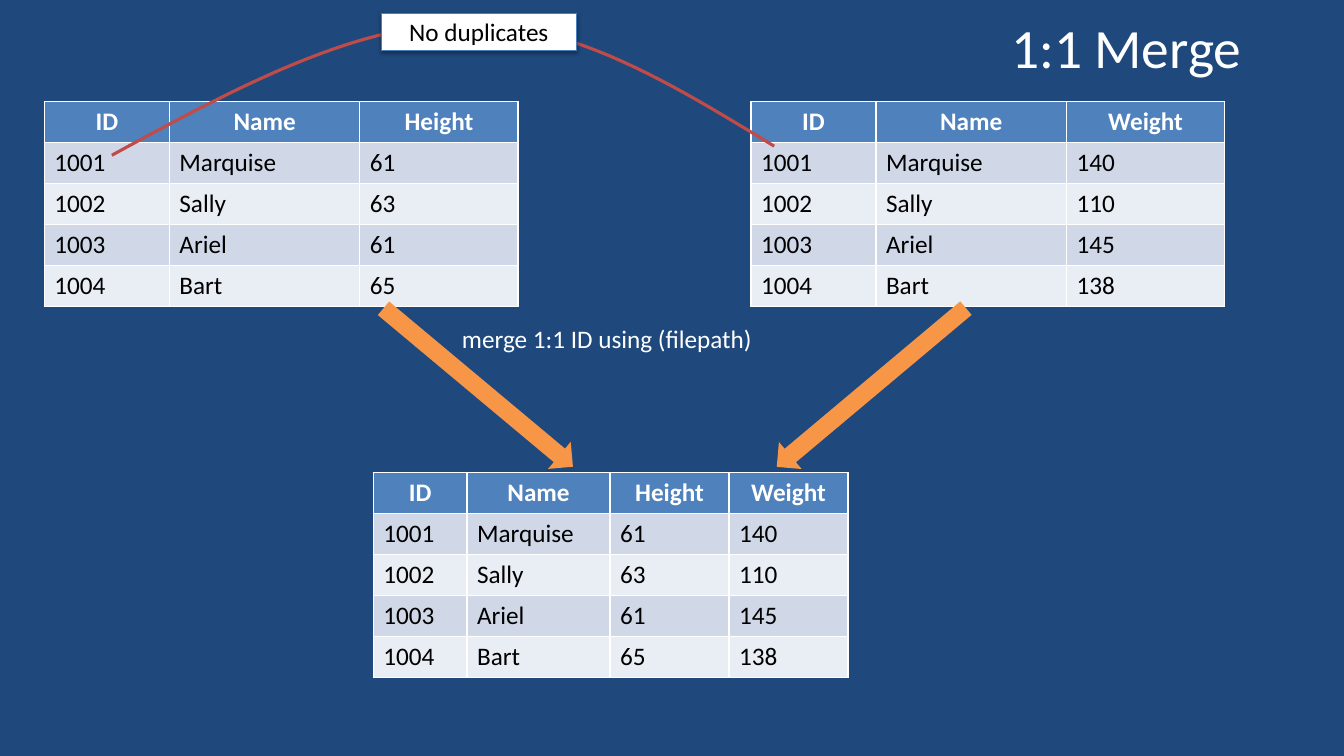
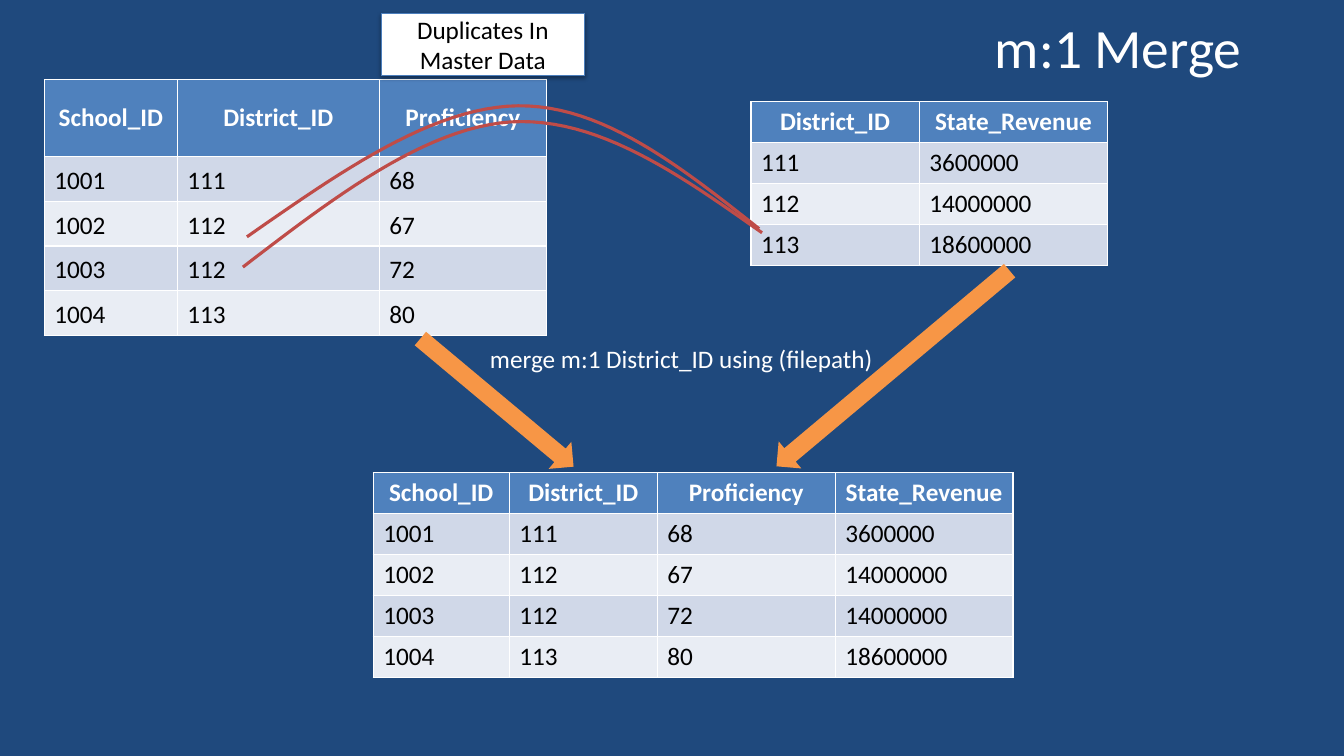
from dataclasses import dataclass

from lxml import etree
from pptx import Presentation
from pptx.dml.color import RGBColor
from pptx.enum.shapes import MSO_SHAPE
from pptx.enum.text import MSO_ANCHOR, MSO_AUTO_SIZE, PP_ALIGN
from pptx.oxml.ns import qn
from pptx.util import Pt


@dataclass(frozen=True)
class Theme:
    background = RGBColor(0x1F, 0x49, 0x7D)
    light = RGBColor(0xFF, 0xFF, 0xFF)
    dark = RGBColor(0x00, 0x00, 0x00)
    header = RGBColor(0x4F, 0x81, 0xBD)
    bands = (RGBColor(0xD0, 0xD8, 0xE8), RGBColor(0xE9, 0xED, 0xF4))
    arrow = RGBColor(0xF7, 0x96, 0x46)
    curve = RGBColor(0xBF, 0x4C, 0x48)
    callout_line = RGBColor(0x4B, 0x7E, 0xBC)
    font = "Calibri"
    title_size = Pt(39.6)
    text_size = Pt(18)


theme = Theme()
ROW_HEIGHT = 29.2
ARROW_HEIGHT = 25.2
CURVE_STEPS = 24


def write(frame, text, color, size=theme.text_size, align=PP_ALIGN.CENTER, bold=False):
    frame.text = text
    paragraph = frame.paragraphs[0]
    paragraph.alignment = align
    font = paragraph.font
    font.name, font.size, font.bold = theme.font, size, bold
    font.color.rgb = color


def add_data_table(slide, left, top, widths, rows, header_height=ROW_HEIGHT, row_height=ROW_HEIGHT):
    height = header_height + row_height * (len(rows) - 1)
    table = slide.shapes.add_table(
        len(rows), len(widths), Pt(left), Pt(top), Pt(sum(widths)), Pt(height)).table
    for column, width in zip(table.columns, widths):
        column.width = Pt(width)
    for row_index, values in enumerate(rows):
        is_header = row_index == 0
        table.rows[row_index].height = Pt(header_height if is_header else row_height)
        for column_index, value in enumerate(values):
            cell = table.cell(row_index, column_index)
            cell.fill.solid()
            if is_header:
                cell.fill.fore_color.rgb = theme.header
                cell.vertical_anchor = MSO_ANCHOR.MIDDLE
                write(cell.text_frame, value, theme.light, bold=True)
            else:
                cell.fill.fore_color.rgb = theme.bands[(row_index - 1) % 2]
                cell.vertical_anchor = MSO_ANCHOR.BOTTOM
                write(cell.text_frame, value, theme.dark, align=PP_ALIGN.LEFT)


# Content: arrows are (left, top, width, rotation); curves are two joined
# cubic Bezier segments given by seven points
merges = [
    {
        "title": "1:1 Merge",
        "command": "merge 1:1 ID using (filepath)",
        "command_at": (283, 227.5),
        "master": [("ID", "Name", "Height"), ("1001", "Marquise", "61"),
                   ("1002", "Sally", "63"), ("1003", "Ariel", "61"), ("1004", "Bart", "65")],
        "master_top": 72.7,
        "master_heights": (ROW_HEIGHT, ROW_HEIGHT),
        "master_widths": (89.3, 136.1, 113),
        "using": [("ID", "Name", "Weight"), ("1001", "Marquise", "140"),
                  ("1002", "Sally", "110"), ("1003", "Ariel", "145"), ("1004", "Bart", "138")],
        "using_widths": (89.3, 136.1, 113),
        "merged_widths": (67, 102.2, 85, 85),
        "arrows": [(253.4, 264.2, 176.4, 39.9), (534.2, 264.2, 176.4, 140)],
        "curves": [[(79.9, 110.9), (165.6, 64.1), (251.3, 18), (330.5, 16.6),
                    (409, 15.8), (481, 60.5), (553, 104.4)]],
        "callout": "No duplicates",
        "callout_size": (139.7, 26.6),
    },
    {
        "title": "m:1 Merge",
        "command": "merge m:1 District_ID using (filepath)",
        "command_at": (336.2, 241.9),
        "master": [("School_ID", "District_ID", "Proficiency"), ("1001", "111", "68"),
                   ("1002", "112", "67"), ("1003", "112", "72"), ("1004", "113", "80")],
        "master_top": 56.9,
        "master_heights": (55, 31.9),
        "master_widths": (95, 144.3, 119.5),
        "using": [("District_ID", "State_Revenue"), ("111", "3600000"),
                  ("112", "14000000"), ("113", "18600000")],
        "using_widths": (120.2, 134.6),
        "merged_widths": (97.2, 105.8, 127, 127),
        "arrows": [(283.7, 275, 142.6, 39.9), (529.2, 250.6, 217.4, 140)],
        "curves": [[(176.4, 169.2), (242.6, 123.1), (308.9, 76.3), (370.1, 75.6),
                    (430.6, 74.9), (486.7, 119.5), (542.2, 163.4)],
                   [(173.5, 190.8), (238.3, 141.1), (303.1, 91.4), (365, 87.1),
                    (427, 83.5), (485.3, 124.6), (544.3, 166.3)]],
        "callout": "Duplicates In Master Data",
        "callout_size": (145.4, 44.6),
    },
]

# Shared page setup
presentation = Presentation()
presentation.slide_width, presentation.slide_height = Pt(960), Pt(540)
background = presentation.slide_master.background.fill
background.solid()
background.fore_color.rgb = theme.background
layout = presentation.slide_layouts[5]

for merge in merges:
    slide = presentation.slides.add_slide(layout)

    # Title
    title = slide.shapes.title
    title.left, title.top, title.width, title.height = Pt(66), Pt(9.4), Pt(828), Pt(47.5)
    title.text_frame.auto_size = MSO_AUTO_SIZE.NONE
    title.text_frame.vertical_anchor = MSO_ANCHOR.MIDDLE
    write(title.text_frame, merge["title"], theme.light, theme.title_size, PP_ALIGN.RIGHT)

    # Source tables, and their join on the first column of the using table
    master, using = merge["master"], merge["using"]
    key = master[0].index(using[0][0])
    lookup = {row[0]: row[-1] for row in using}
    merged = [row + (lookup[row[key]],) for row in master]
    add_data_table(slide, 31.7, merge["master_top"], merge["master_widths"], master,
                   *merge["master_heights"])
    add_data_table(slide, 536.4, 72.7, merge["using_widths"], using)
    add_data_table(slide, 266.6, 337.7, merge["merged_widths"], merged)

    # Merge command
    left, top = merge["command_at"]
    command = slide.shapes.add_textbox(Pt(left), Pt(top), Pt(301), Pt(29))
    command.text_frame.word_wrap = True
    write(command.text_frame, merge["command"], theme.light)

    # Arrows to the merged table
    for left, top, width, rotation in merge["arrows"]:
        arrow = slide.shapes.add_shape(
            MSO_SHAPE.RIGHT_ARROW, Pt(left), Pt(top), Pt(width), Pt(ARROW_HEIGHT))
        arrow.rotation = rotation
        arrow.shadow.inherit = False
        arrow.fill.solid()
        arrow.fill.fore_color.rgb = theme.arrow
        arrow.line.fill.background()

    # Curves between matching keys
    for points in merge["curves"]:
        outline = []
        for start in (0, 3):
            controls = points[start:start + 4]
            for step in range(1, CURVE_STEPS + 1):
                t = step / CURVE_STEPS
                weights = ((1 - t) ** 3, 3 * t * (1 - t) ** 2, 3 * t ** 2 * (1 - t), t ** 3)
                outline.append(tuple(
                    Pt(sum(weight * point[axis] for weight, point in zip(weights, controls)))
                    for axis in (0, 1)))
        builder = slide.shapes.build_freeform(Pt(points[0][0]), Pt(points[0][1]))
        builder.add_line_segments(outline, close=False)
        curve = builder.convert_to_shape()
        curve.shadow.inherit = False
        curve.fill.background()
        curve.line.color.rgb = theme.curve
        curve.line.width = Pt(2.25)

    # Callout with a soft shadow below
    width, height = merge["callout_size"]
    callout = slide.shapes.add_shape(
        MSO_SHAPE.RECTANGLE, Pt(272.2), Pt(9.4), Pt(width), Pt(height))
    callout.fill.solid()
    callout.fill.fore_color.rgb = theme.light
    callout.line.color.rgb = theme.callout_line
    callout.line.width = Pt(0.75)
    callout.text_frame.word_wrap = True
    callout.text_frame.vertical_anchor = MSO_ANCHOR.MIDDLE
    write(callout.text_frame, merge["callout"], theme.dark)
    callout.shadow.inherit = False
    effects = callout.fill._xPr.find(qn("a:effectLst"))
    shadow = etree.SubElement(effects, qn("a:outerShdw"), blurRad=str(Pt(3.1)),
                              dist=str(Pt(1.8)), dir="5400000", rotWithShape="0")
    shadow_color = etree.SubElement(shadow, qn("a:srgbClr"), val=str(theme.dark))
    etree.SubElement(shadow_color, qn("a:alpha"), val="35000")

presentation.save("out.pptx")
